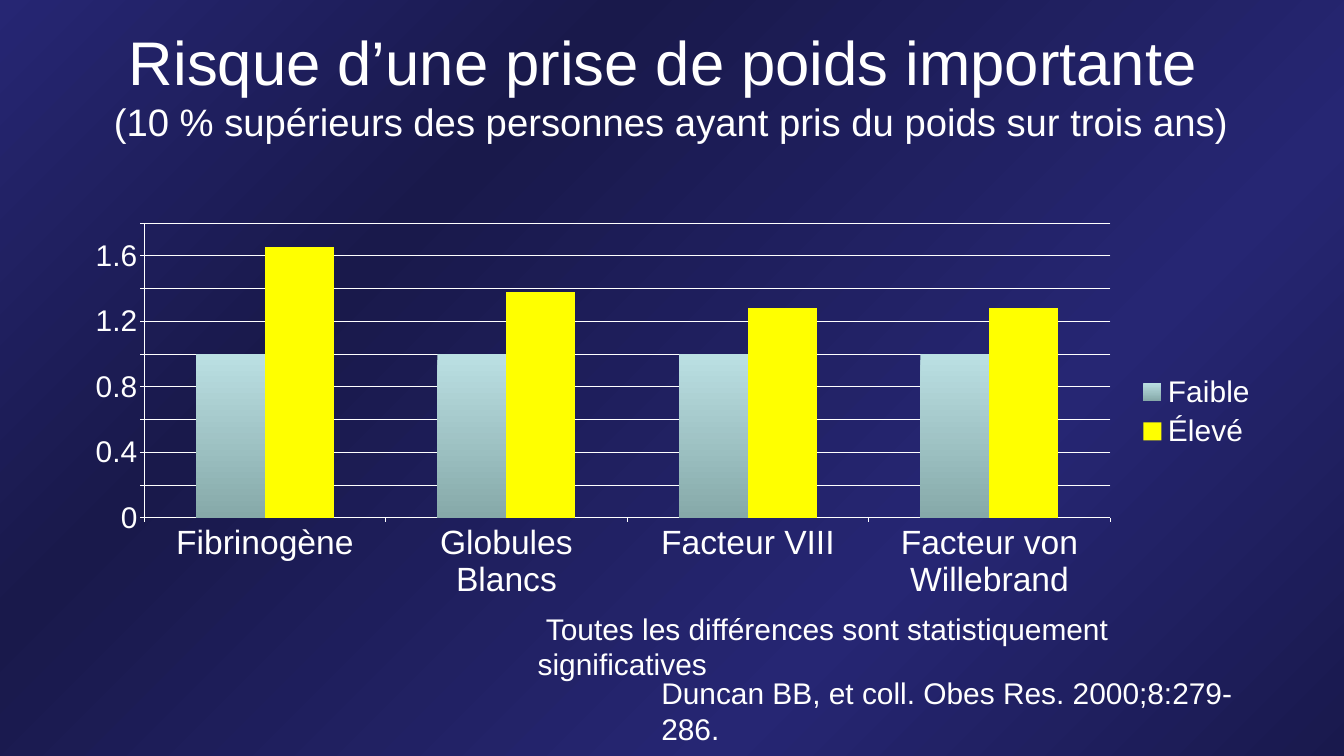
from dataclasses import dataclass

from lxml import etree
from pptx import Presentation
from pptx.chart.data import CategoryChartData
from pptx.dml.color import RGBColor
from pptx.enum.chart import XL_CHART_TYPE, XL_LEGEND_POSITION, XL_TICK_MARK
from pptx.enum.text import MSO_ANCHOR, MSO_AUTO_SIZE, PP_ALIGN
from pptx.oxml import parse_xml
from pptx.oxml.ns import qn
from pptx.util import Inches, Pt

COLUMNS = XL_CHART_TYPE.COLUMN_CLUSTERED
LEGEND_RIGHT = XL_LEGEND_POSITION.RIGHT
TICK_OUTSIDE = XL_TICK_MARK.OUTSIDE
MIDDLE, TOP = MSO_ANCHOR.MIDDLE, MSO_ANCHOR.TOP
FIXED_SIZE = MSO_AUTO_SIZE.NONE
CENTER = PP_ALIGN.CENTER
TITLE_ONLY = 5


@dataclass(frozen=True)
class Theme:
    font: str = "Arial"
    text: str = "FFFFFF"
    low: str = "BBE0E3"
    low_shade: str = "86A9A9"
    high: str = "FFFF00"
    backdrop: tuple = ((0, "262673"), (30, "19194B"), (70, "262673"), (100, "19194D"))
    title: int = 66
    subtitle: int = 41
    category: int = 36
    body: int = 32


THEME = Theme()
CATEGORIES = ("Fibrinogène", "Globules Blancs", "Facteur VIII", "Facteur von Willebrand")
SERIES = {"Faible": (1, 1, 1, 1), "Élevé": (1.65, 1.38, 1.28, 1.28)}
PLOT_LAYOUT = {"x": 0.06, "y": 0.02, "w": 0.81, "h": 0.75}


def color(value):
    return RGBColor.from_string(value)


def style_font(font, size, bold=False):
    formats = {"name": THEME.font, "size": Pt(size), "bold": bold}
    for name, value in formats.items():
        setattr(font, name, value)
    font.color.rgb = color(THEME.text)


def add_span(para, text, size, bold=False):
    span = para.add_run()
    span.text = text
    style_font(span.font, size, bold)


def format_frame(frame, anchor):
    formats = {
        "word_wrap": True, "auto_size": FIXED_SIZE, "vertical_anchor": anchor,
        "margin_left": Inches(0.17), "margin_right": Inches(0.17),
        "margin_top": Inches(0.08), "margin_bottom": Inches(0.08),
    }
    for name, value in formats.items():
        setattr(frame, name, value)


def set_backdrop(page):
    """Fill the background with a diagonal gradient of several stops."""
    fill = page.background.fill
    fill.gradient()
    fill.gradient_angle = 315
    stops = page.background._cSld.find(".//" + qn("a:gsLst"))
    for stop in list(stops):
        stops.remove(stop)
    for percent, value in THEME.backdrop:
        stop = etree.SubElement(stops, qn("a:gs"), pos=str(percent * 1000))
        etree.SubElement(stop, qn("a:srgbClr"), val=value)


def add_title(page, heading, subheading):
    title = page.shapes.title
    title.left, title.top = Inches(1.08), Inches(0.71)
    title.width, title.height = Inches(17.83), Inches(1.08)
    format_frame(title.text_frame, MIDDLE)
    para = title.text_frame.paragraphs[0]
    para.alignment = CENTER
    add_span(para, heading, THEME.title)
    para.add_line_break()
    add_span(para, subheading, THEME.subtitle)


def add_text(page, place, spans):
    box = page.shapes.add_textbox(*map(Inches, place))
    format_frame(box.text_frame, TOP)
    for text, bold in spans:
        add_span(box.text_frame.paragraphs[0], text, THEME.body, bold)


def style_line(line):
    line.color.rgb = color(THEME.text)
    line.width = Pt(0.75)


def style_axis(axis, size):
    axis.major_tick_mark = TICK_OUTSIDE
    style_font(axis.tick_labels.font, size)
    style_line(axis.format.line)


def set_plot_layout(chart):
    """Fix the inner plot area as fractions of the chart's size."""
    area = chart.plots[0]._element.getparent()
    for old in area.findall(qn("c:layout")):
        area.remove(old)
    settings = {"layoutTarget": "inner", "xMode": "edge", "yMode": "edge", **PLOT_LAYOUT}
    values = "".join(f'<c:{name} val="{value}"/>' for name, value in settings.items())
    area.insert(0, parse_xml(
        '<c:layout xmlns:c="http://schemas.openxmlformats.org/drawingml/2006/chart">'
        f"<c:manualLayout>{values}</c:manualLayout></c:layout>"))


def fill_columns(plot):
    low, high = (series.format.fill for series in plot.series)
    low.gradient()
    low.gradient_angle = 270
    for stop, value in zip(low.gradient_stops, (THEME.low, THEME.low_shade)):
        stop.color.rgb = color(value)
    high.solid()
    high.fore_color.rgb = color(THEME.high)


def add_risk_chart(page, place):
    data = CategoryChartData()
    data.categories = CATEGORIES
    for name, values in SERIES.items():
        data.add_series(name, values)
    chart = page.shapes.add_chart(COLUMNS, *map(Inches, place), data).chart
    style_font(chart.font, 18)
    chart.has_title = False

    plot = chart.plots[0]
    plot.vary_by_categories = False
    plot.gap_width, plot.overlap = 150, 0
    fill_columns(plot)

    style_axis(chart.category_axis, THEME.category)
    scale = chart.value_axis
    style_axis(scale, THEME.body)
    scale.minimum_scale, scale.maximum_scale, scale.major_unit = 0, 1.8, 0.2
    scale.has_major_gridlines = True
    style_line(scale.major_gridlines.format.line)

    chart.has_legend = True
    chart.legend.position = LEGEND_RIGHT
    chart.legend.include_in_layout = False
    style_font(chart.legend.font, THEME.body)
    set_plot_layout(chart)


def main():
    deck = Presentation()
    deck.slide_width, deck.slide_height = Inches(20), Inches(11.25)
    page = deck.slides.add_slide(deck.slide_layouts[TITLE_ONLY])
    set_backdrop(page)
    add_title(page, "Risque d’une prise de poids importante ",
              "(10 % supérieurs des personnes ayant pris du poids sur trois ans)")
    add_risk_chart(page, (1.08, 3.2, 17.75, 5.85))
    add_text(page, (9.67, 9.96, 9.51, 1.25),
             [("Duncan BB, et coll. Obes Res. 2000;8:279-286.", False)])
    add_text(page, (7.83, 9, 9.55, 0.71),
             [(" ", True),
              ("Toutes les différences sont statistiquement significatives", False)])
    deck.save("out.pptx")


if __name__ == "__main__":
    main()
